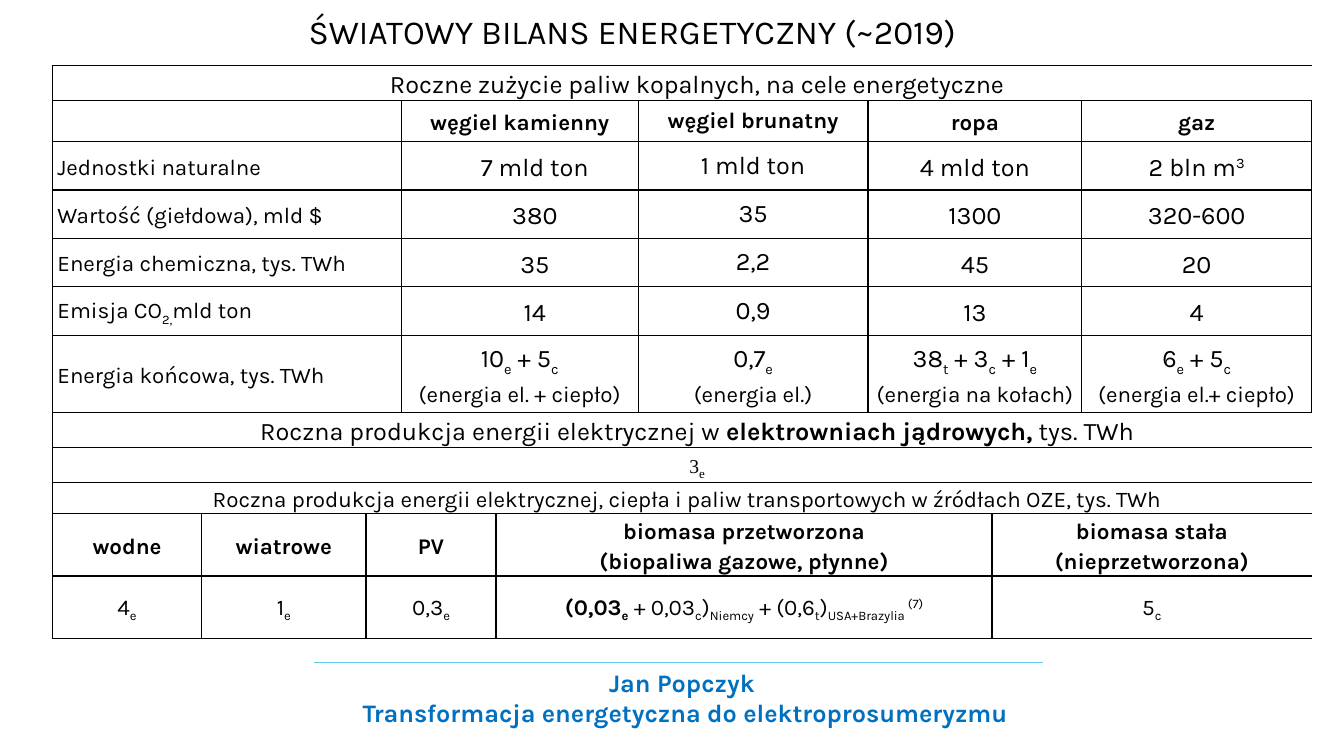
from dataclasses import dataclass

from lxml import etree
from pptx import Presentation
from pptx.dml.color import RGBColor
from pptx.enum.shapes import MSO_CONNECTOR
from pptx.enum.text import MSO_ANCHOR, PP_ALIGN
from pptx.oxml.ns import qn
from pptx.util import Emu, Pt

PX = 9144  # 100 px to the inch
LEFT, CENTER = PP_ALIGN.LEFT, PP_ALIGN.CENTER
TOP, MIDDLE = MSO_ANCHOR.TOP, MSO_ANCHOR.MIDDLE
STRAIGHT = MSO_CONNECTOR.STRAIGHT
TITLE_ONLY = 5
NO_STYLE = "{2D5ABB26-0587-4C30-8999-92F81FD0307C}"
COLORS = {"text": "000000", "grid": "000000", "author": "0070C0", "rule": "5FCBEF"}


@dataclass
class Run:
    text: str
    bold: bool = False
    baseline: int = 0
    size: int = 0
    font: str = "Karla"


@dataclass
class Para:
    runs: list[Run]
    size: int = 16
    align: PP_ALIGN = CENTER
    indent: int = 0
    spacing: float = 1.15
    color: str = "text"


def px(n: int) -> Emu:
    return Emu(n * PX)


def sub(text: str, bold: bool = False) -> Run:
    return Run(text, bold, -25)


def sup(text: str) -> Run:
    return Run(text, baseline=30)


def line(text: str, size: int = 16, bold: bool = False, **kw) -> Para:
    """A paragraph of one run."""
    return Para([Run(text, bold)], size, **kw)


def energy(*terms: str) -> list[Run]:
    """Join terms such as '10e' with plus signs, lowering the last letter."""
    runs = []
    for i, term in enumerate(terms):
        runs += [Run((" + " if i else "") + term[:-1]), sub(term[-1])]
    return runs


def write(tf, paras: list[Para]) -> None:
    for i, para in enumerate(paras):
        p = tf.paragraphs[0] if i == 0 else tf.add_paragraph()
        p.alignment = para.align
        p.line_spacing = para.spacing
        if para.indent:
            p._p.get_or_add_pPr().set("indent", str(px(para.indent)))
        for run in para.runs:
            r = p.add_run()
            r.text = run.text
            r.font.name = run.font
            r.font.size = Pt(run.size or para.size)
            r.font.bold = run.bold
            r.font.color.rgb = RGBColor.from_string(COLORS[para.color])
            if run.baseline:
                r.font._element.set("baseline", str(run.baseline * 1000))


def border(cell, sides: str) -> None:
    tcPr = cell._tc.get_or_add_tcPr()
    for side in sides:
        ln = etree.SubElement(tcPr, qn(f"a:ln{side}"), w=str(Pt(1)))
        fill = etree.SubElement(ln, qn("a:solidFill"))
        etree.SubElement(fill, qn("a:srgbClr"), val=COLORS["grid"])


def fuel_row(label: Para, coal: str, lignite: str, oil: str, gas: list[Run]) -> list[list[Para]]:
    return [[label], [line(coal, 18, indent=30)], [line(lignite, 18, spacing=1.0)],
            [line(oil, 18)], [Para(gas, 18)]]


def label(text: str) -> Para:
    return line(text, align=LEFT)


def final_energy(note: str, *terms: str) -> list[Para]:
    return [Para(energy(*terms), 18), line(note)]


COLS = [148, 163, 35, 94, 141, 228, 123, 89, 228]
HEIGHTS = [34, 41, 48, 48, 48, 48, 77, 34, 26, 30, 62, 62]
WHOLE, FUELS, RENEWABLES = (9,), (3, 2, 1, 2, 1), (1, 1, 2, 3, 2)

ROWS = [
    (WHOLE, [[line("Roczne zużycie paliw kopalnych, na cele energetyczne", 18, indent=30)]]),
    (FUELS, [[], [line("węgiel kamienny", bold=True)],
             [line("węgiel brunatny", bold=True, spacing=1.0)],
             [line("ropa", bold=True)], [line("gaz", bold=True)]]),
    (FUELS, fuel_row(label("Jednostki naturalne"), "7 mld ton", "1 mld ton", "4 mld ton",
                     [Run("2 bln m"), sup("3")])),
    (FUELS, fuel_row(label("Wartość (giełdowa), mld $"), "380", "35", "1300", [Run("320-600")])),
    (FUELS, fuel_row(label("Energia chemiczna, tys. TWh"), "35", "2,2", "45", [Run("20")])),
    (FUELS, fuel_row(Para([Run("Emisja CO"), sub("2,"), Run("mld ton")], align=LEFT),
                     "14", "0,9", "13", [Run("4")])),
    (FUELS, [[label("Energia końcowa, tys. TWh")],
             final_energy("(energia el. + ciepło)", "10e", "5c"),
             final_energy("(energia el.)", "0,7e"),
             final_energy("(energia na kołach)", "38t", "3c", "1e"),
             final_energy("(energia el.+ ciepło)", "6e", "5c")]),
    (WHOLE, [[Para([Run("Roczna produkcja energii elektrycznej w "),
                    Run("elektrowniach jądrowych,", True), Run(" tys. TWh")], 18, indent=30)]]),
    (WHOLE, [[Para([Run("3", size=14, font="Times New Roman"),
                    Run("e", baseline=-25, font="Times New Roman")], indent=30)]]),
    (WHOLE, [[line("Roczna produkcja energii elektrycznej, ciepła i paliw transportowych "
                   "w źródłach OZE, tys. TWh", indent=10)]]),
    (RENEWABLES, [[line("wodne", bold=True)], [line("wiatrowe", bold=True)],
                  [line("PV", bold=True)],
                  [line("biomasa przetworzona", bold=True),
                   line("(biopaliwa gazowe, płynne)", bold=True)],
                  [line("biomasa stała (nieprzetworzona)", bold=True)]]),
    (RENEWABLES, [[Para(energy("4e"))], [Para(energy("1e"))], [Para(energy("0,3e"))],
                  [Para([Run("(0,03", True), sub("e", True), Run(" + 0,03"), sub("c"),
                         Run(")"), sub("Niemcy"), Run(" + (0,6"), sub("t"), Run(")"),
                         sub("USA+Brazylia "), sup("(7)")])],
                  [Para(energy("5c"))]]),
]


def add_balance_table(slide) -> None:
    frame = slide.shapes.add_table(len(HEIGHTS), len(COLS), px(52), px(65),
                                   px(sum(COLS)), px(sum(HEIGHTS)))
    table = frame.table
    table.first_row = table.horz_banding = False
    table._tbl.tblPr.find(qn("a:tableStyleId")).text = NO_STYLE
    for col, width in zip(table.columns, COLS):
        col.width = px(width)
    for i, (height, (spans, contents)) in enumerate(zip(HEIGHTS, ROWS)):
        table.rows[i].height = px(height)
        start = 0
        for span, paras in zip(spans, contents):
            last = start + span - 1
            cell = table.cell(i, start)
            if span > 1:
                cell.merge(table.cell(i, last))
            for j in range(start, last + 1):
                part = table.cell(i, j)
                border(part, "L" * (j == start) + "R" * (j == last) + "TB")
                part.fill.background()
            cell.vertical_anchor = MIDDLE
            cell.margin_left = cell.margin_right = px(5)
            cell.margin_top = cell.margin_bottom = 0
            write(cell.text_frame, paras)
            start += span


def add_title(slide) -> None:
    sp = slide.shapes.title
    sp.left, sp.top, sp.width, sp.height = px(22), px(6), px(1210), px(50)
    sp.text_frame.vertical_anchor = TOP
    write(sp.text_frame, [line("ŚWIATOWY BILANS ENERGETYCZNY (~2019)", 24, spacing=1.0)])


def add_author(slide) -> None:
    sp = slide.shapes.add_textbox(px(324), px(657), px(711), px(71))
    sp.text_frame.word_wrap = True
    write(sp.text_frame, [
        line(text, 18, True, spacing=1.0, color="author")
        for text in ("Jan Popczyk ", "Transformacja energetyczna do elektroprosumeryzmu")])


def add_rule(slide) -> None:
    rule = slide.shapes.add_connector(STRAIGHT, px(311), px(657), px(1034), px(657))
    rule.line.color.rgb = RGBColor.from_string(COLORS["rule"])
    rule.line.width = Pt(1)
    etree.SubElement(rule._element.spPr, qn("a:effectLst"))


def main() -> None:
    prs = Presentation()
    prs.slide_width, prs.slide_height = px(1333), px(750)
    slide = prs.slides.add_slide(prs.slide_layouts[TITLE_ONLY])
    add_author(slide)
    add_title(slide)
    add_rule(slide)
    add_balance_table(slide)
    prs.save("out.pptx")


if __name__ == "__main__":
    main()
